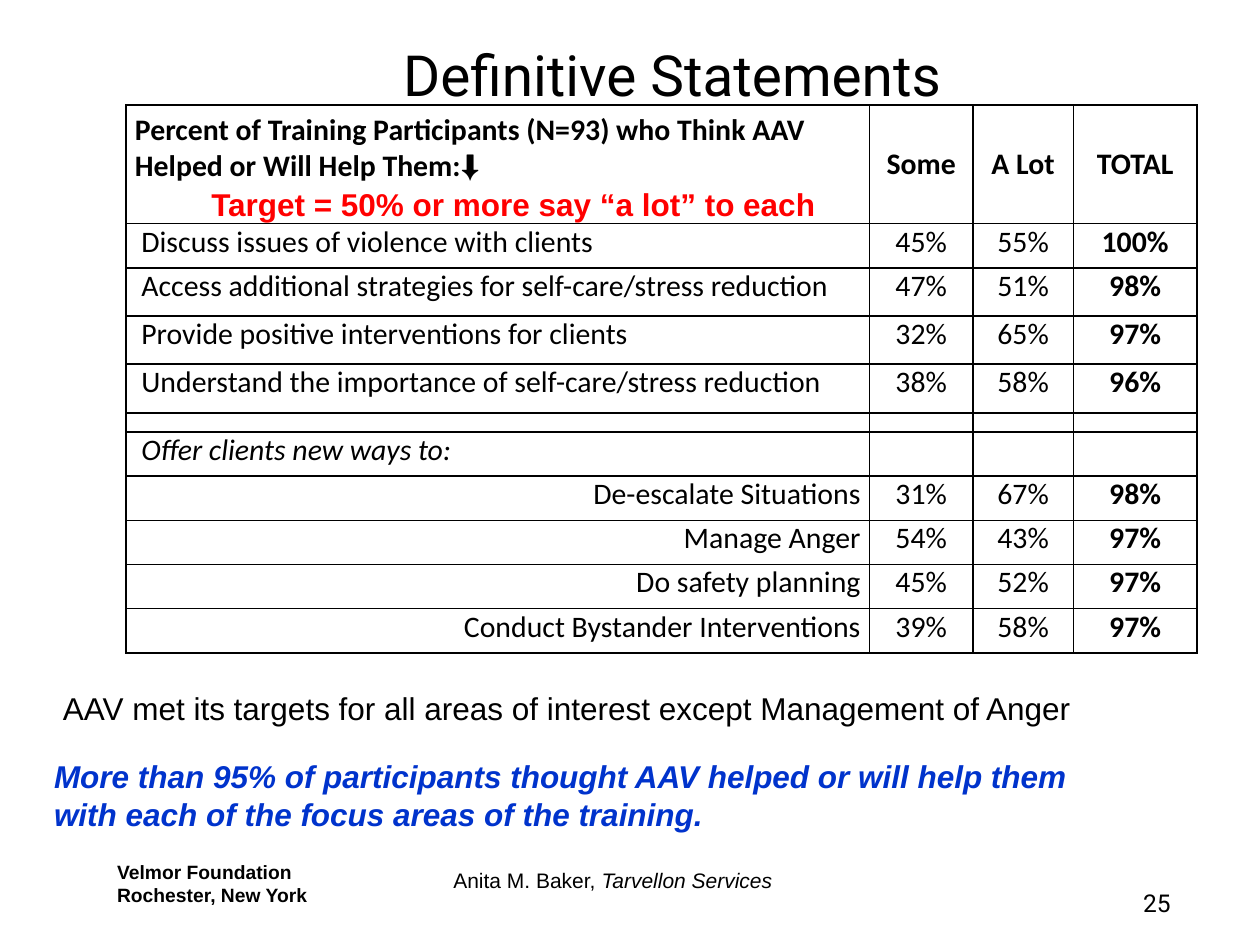
"""Build the Definitive Statements slide with its table of training results."""
import lxml.etree
import pptx
import pptx.dml.color
import pptx.enum.text
import pptx.oxml.ns
import pptx.util

Cm = pptx.util.Cm
Pt = pptx.util.Pt
qn = pptx.oxml.ns.qn
ALIGN = pptx.enum.text.PP_ALIGN
ANCHOR = pptx.enum.text.MSO_ANCHOR
BLACK = pptx.dml.color.RGBColor(0x00, 0x00, 0x00)
RED = pptx.dml.color.RGBColor(0xFF, 0x00, 0x00)
BLUE = pptx.dml.color.RGBColor(0x00, 0x33, 0xCC)

COLUMN_WIDTHS = [14.99, 2.08, 2.03, 2.49]
ROW_HEIGHTS = [2.39, 0.89, 0.97, 0.97, 0.99, 0.38] + [0.89] * 5
HEADER = ["Percent of Training Participants (N=93) who Think AAV Helped or Will Help Them:⬇",
          "Some", "A Lot", "TOTAL"]
GENERAL_ROWS = [
    ["Discuss issues of violence with clients", "45%", "55%", "100%"],
    ["Access additional strategies for self-care/stress reduction", "47%", "51%", "98%"],
    ["Provide positive interventions for clients", "32%", "65%", "97%"],
    ["Understand the importance of self-care/stress reduction", "38%", "58%", "96%"],
]
BLANK_ROW = ["", "", "", ""]
SUBHEADING_ROW = ["Offer clients new ways to:", "", "", ""]
NEW_WAYS_ROWS = [
    ["De-escalate Situations", "31%", "67%", "98%"],
    ["Manage Anger", "54%", "43%", "97%"],
    ["Do safety planning", "45%", "52%", "97%"],
    ["Conduct Bystander Interventions", "39%", "58%", "97%"],
]


class SlideBuilder:
    """Hold the table style and the current slide."""

    table_font = "Calibri"
    table_size = 17
    border_width = 1
    cell_margin = 0.18
    label_margin = 0.31

    def __init__(self, slide):
        self.slide = slide

    def add_run(self, paragraph, text, font, size, color=BLACK, bold=False, italic=False):
        """Add one styled run to a paragraph."""
        run = paragraph.add_run()
        run.text = text
        run.font.name = font
        run.font.size = Pt(size)
        run.font.color.rgb = color
        run.font.bold = bold
        run.font.italic = italic

    def add_text(self, place, lines, size, font="Arial", color=BLACK, bold=False,
                 align=ALIGN.LEFT, anchor=ANCHOR.TOP, margin_left=0.25):
        """Add a text box; each line is a list of (text, italic) runs."""
        shape = self.slide.shapes.add_textbox(*map(Cm, place))
        frame = shape.text_frame
        frame.word_wrap = True
        frame.vertical_anchor = anchor
        frame.margin_left = Cm(margin_left)
        for index, line in enumerate(lines):
            paragraph = frame.add_paragraph() if index else frame.paragraphs[0]
            paragraph.alignment = align
            for text, italic in line:
                self.add_run(paragraph, text, font, size, color, bold, italic)

    def add_borders(self, cell):
        """Draw a solid line on all four sides of a cell."""
        properties = cell._tc.get_or_add_tcPr()
        for side in ("a:lnL", "a:lnR", "a:lnT", "a:lnB"):
            line = lxml.etree.SubElement(properties, qn(side), w=str(Pt(self.border_width)))
            fill = lxml.etree.SubElement(line, qn("a:solidFill"))
            lxml.etree.SubElement(fill, qn("a:srgbClr"), val=str(BLACK))

    def fill_cell(self, cell, text, align, bold, italic):
        """Style a cell and write its text."""
        self.add_borders(cell)
        cell.fill.background()
        cell.margin_left = cell.margin_right = Cm(self.cell_margin)
        cell.margin_top = cell.margin_bottom = 0
        paragraph = cell.text_frame.paragraphs[0]
        paragraph.alignment = align
        if text:
            self.add_run(paragraph, text, self.table_font, self.table_size, bold=bold, italic=italic)
        else:
            lxml.etree.SubElement(paragraph._p, qn("a:endParaRPr"), sz="800")

    def add_results_table(self, left, top):
        """Add the table of answers by focus area."""
        rows = [HEADER, *GENERAL_ROWS, BLANK_ROW, SUBHEADING_ROW, *NEW_WAYS_ROWS]
        table = self.slide.shapes.add_table(
            len(rows), len(COLUMN_WIDTHS), Cm(left), Cm(top),
            Cm(sum(COLUMN_WIDTHS)), Cm(sum(ROW_HEIGHTS))).table
        table.first_row = table.horz_banding = False
        for column, width in zip(table.columns, COLUMN_WIDTHS):
            column.width = Cm(width)
        for row_index, (values, height) in enumerate(zip(rows, ROW_HEIGHTS)):
            table.rows[row_index].height = Cm(height)
            is_header = values is HEADER
            label_align = ALIGN.RIGHT if values in NEW_WAYS_ROWS else ALIGN.LEFT
            for column_index, text in enumerate(values):
                cell = table.cell(row_index, column_index)
                is_label = column_index == 0
                self.fill_cell(cell, text, label_align if is_label else ALIGN.CENTER,
                               is_header or column_index == 3, values is SUBHEADING_ROW)
                if is_header:
                    cell.vertical_anchor = ANCHOR.MIDDLE
                elif is_label and label_align == ALIGN.LEFT:
                    cell.margin_left = Cm(self.label_margin)
        table.cell(0, 0).margin_bottom = Cm(0.66)


def main():
    """Build and save the presentation."""
    presentation = pptx.Presentation()
    presentation.slide_width = Cm(25.4)
    presentation.slide_height = Cm(19.05)
    builder = SlideBuilder(presentation.slides.add_slide(presentation.slide_layouts[6]))

    builder.add_text((2.97, 0.84, 21.16, 1.47), [[("Definitive Statements", False)]], 32.4,
                     font="Roboto", align=ALIGN.CENTER, anchor=ANCHOR.BOTTOM)
    builder.add_results_table(2.54, 2.12)
    builder.add_text((4.01, 3.61, 12.9, 1.02),
                     [[("Target = 50% or more say “a lot” to each", False)]],
                     18, color=RED, bold=True)
    builder.add_text((0.84, 13.77, 23.93, 1.02),
                     [[("AAV met its targets for all areas of interest except Management of Anger", False)]],
                     18, margin_left=0.43)
    builder.add_text((0.84, 15.14, 21.39, 1.8),
                     [[("More than 95% of participants thought AAV helped or will help them "
                        "with each of the focus areas of the training.", True)]],
                     18, color=BLUE, bold=True)
    builder.add_text((2.11, 17.22, 5.28, 1.19),
                     [[("Velmor Foundation", False)], [("Rochester, New York", False)]], 11, bold=True)
    builder.add_text((8.89, 17.37, 8.05, 1.45),
                     [[("Anita M. Baker, ", False), ("Tarvellon Services", True)]], 12)
    builder.add_text((22.45, 17.78, 1.4, 1.27), [[("25", False)]], 14,
                     font="Roboto", align=ALIGN.RIGHT)
    presentation.save("out.pptx")


if __name__ == "__main__":
    main()
